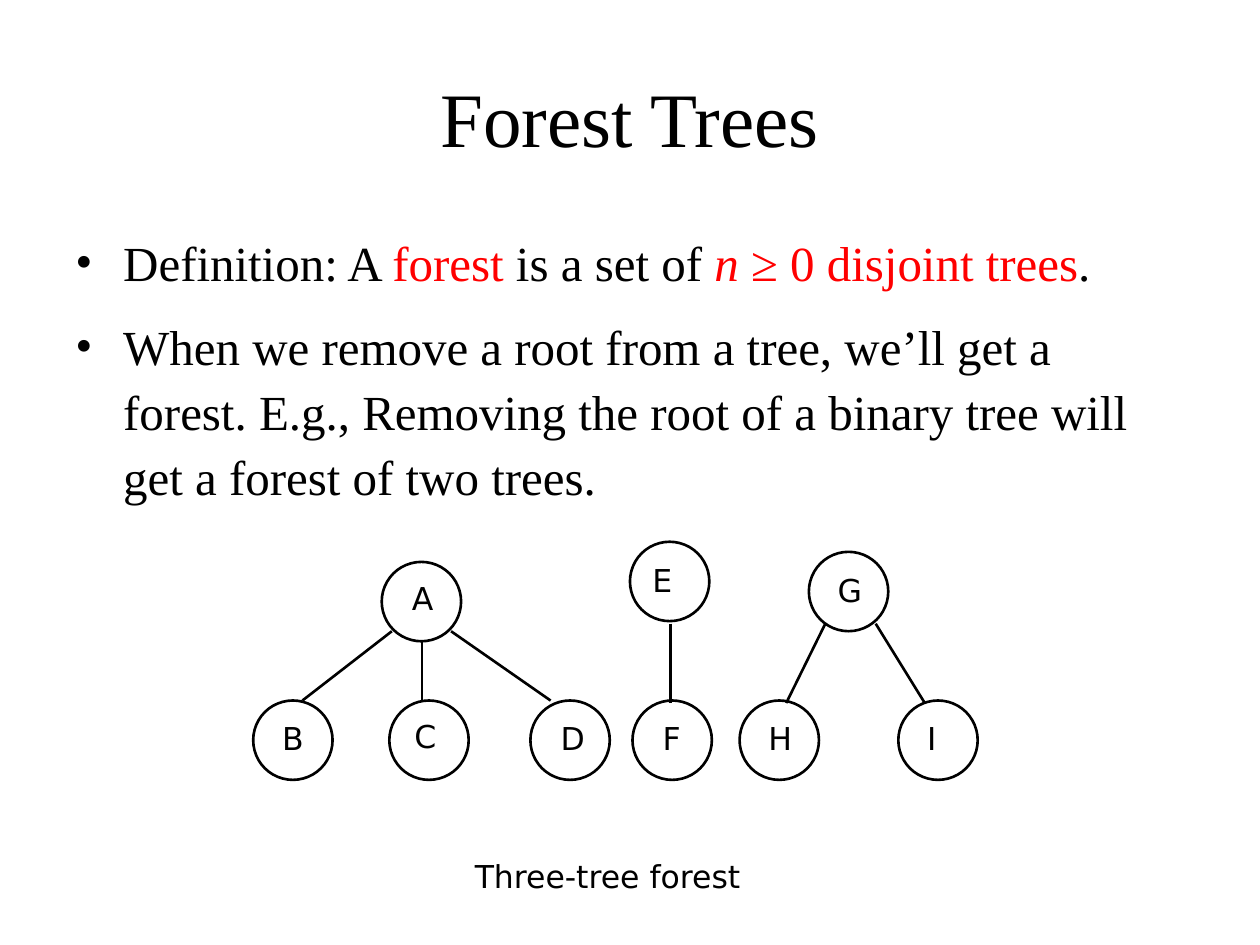
"""Build the slide on forests of trees with three small tree drawings."""
from lxml import etree
from pptx import Presentation
from pptx.dml.color import RGBColor
from pptx.enum.shapes import MSO_CONNECTOR, MSO_SHAPE
from pptx.enum.text import MSO_ANCHOR, MSO_AUTO_SIZE, PP_ALIGN
from pptx.oxml.ns import qn
from pptx.util import Inches, Pt

OVAL = MSO_SHAPE.OVAL
LINE = MSO_CONNECTOR.STRAIGHT
MIDDLE = MSO_ANCHOR.MIDDLE
GROW = MSO_AUTO_SIZE.SHAPE_TO_FIT_TEXT
CENTER = PP_ALIGN.CENTER
BLACK = RGBColor(0, 0, 0)
RED = RGBColor(255, 0, 0)

HEAD = {"name": "Times New Roman", "size": Pt(44)}
BODY = {"name": "Times New Roman", "size": Pt(28)}
LABEL = {"name": "DejaVu Sans", "size": Pt(18)}
SPACE = {"line_spacing": 1.1, "space_before": Pt(5.6), "space_after": Pt(5.6)}
SIZE = 0.63
LOW = 5.56

deck = Presentation()
deck.slide_width, deck.slide_height = Inches(10), Inches(7.5)
slide = deck.slides.add_slide(deck.slide_layouts[6])
shapes = slide.shapes


def add_run(para, text, form, color=BLACK, italic=False):
    run = para.add_run()
    run.text = text
    for key, value in {**form, "italic": italic}.items():
        setattr(run.font, key, value)
    run.font.color.rgb = color


def add_box(left, top, width, height, **form):
    box = shapes.add_textbox(*map(Inches, (left, top, width, height)))
    for key, value in form.items():
        setattr(box.text_frame, key, value)
    return box.text_frame


title = add_box(0.5, 0.3, 9, 1.25, word_wrap=True, vertical_anchor=MIDDLE)
title.paragraphs[0].alignment = CENTER
add_run(title.paragraphs[0], "Forest Trees", HEAD)

points = [
    [("Definition: A ",), ("forest", RED), (" is a set of ",),
     ("n", RED, True), (" ≥ 0 disjoint trees", RED), (".",)],
    [("When we remove a root from a tree, we’ll get a forest. E.g., "
      "Removing the root of a binary tree will get a forest of two trees.",)],
]
body = add_box(0.5, 1.75, 9, 5.33, word_wrap=True)
for index, parts in enumerate(points):
    para = body.add_paragraph() if index else body.paragraphs[0]
    for key, value in SPACE.items():
        setattr(para, key, value)
    props = para._p.get_or_add_pPr()
    props.set("marL", str(Inches(0.38)))
    props.set("indent", str(Inches(-0.38)))
    etree.SubElement(props, qn("a:buFont")).set("typeface", "Times New Roman")
    etree.SubElement(props, qn("a:buChar")).set("char", "•")
    for text, *style in parts:
        add_run(para, text, BODY, *style)

nodes = [
    ("A", 3.03, 4.46, 3.17, 4.55, 0.37),
    ("B", 2.01, LOW, 2.14, 5.66, 0.37),
    ("C", 3.09, LOW, 3.19, 5.64, 0.37),
    ("D", 4.21, LOW, 4.35, 5.66, 0.39),
    ("E", 5, 4.3, 5.08, 4.4, 0.36),
    ("F", 5.02, LOW, 5.16, 5.66, 0.35),
    ("G", 6.42, 4.38, 6.55, 4.48, 0.4),
    ("H", 5.87, LOW, 6, 5.66, 0.39),
    ("I", 7.13, LOW, 7.26, 5.66, 0.31),
]
for name, left, top, *place, width in nodes:
    node = shapes.add_shape(OVAL, *map(Inches, (left, top, SIZE, SIZE)))
    node.shadow.inherit = False
    node.fill.background()
    node.line.color.rgb = BLACK
    node.line.width = Pt(1.5)
    label = add_box(*place, width, 0.4, word_wrap=name == "C", auto_size=GROW)
    add_run(label.paragraphs[0], name, LABEL)

edges = [
    (2.4, LOW, 3.11, 5.01),
    (3.35, 5.09, 3.35, LOW),
    (3.58, 5.01, 4.37, LOW),
    (5.32, 4.95, 5.32, 5.58),
    (6.55, 4.95, 6.24, 5.58),
    (6.95, 4.95, 7.34, 5.58),
]
for ends in edges:
    edge = shapes.add_connector(LINE, *map(Inches, ends))
    edge.line.color.rgb = BLACK
    edge.line.width = Pt(1.5)
    etree.SubElement(edge._element.spPr, qn("a:effectLst"))

note = add_box(3.67, 6.75, 2.37, 0.4, word_wrap=False, auto_size=GROW)
add_run(note.paragraphs[0], "Three-tree forest", LABEL)

deck.save("out.pptx")
